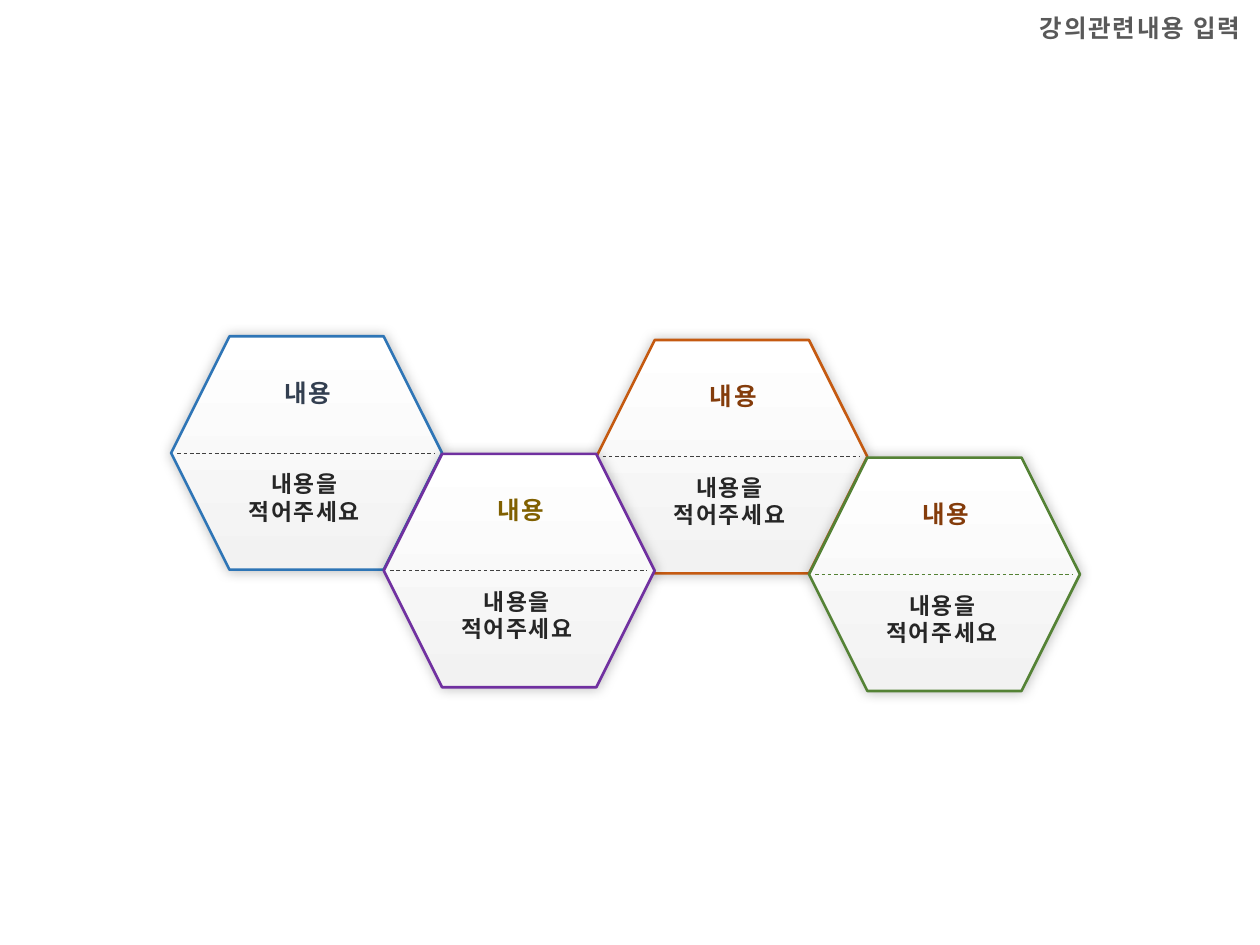
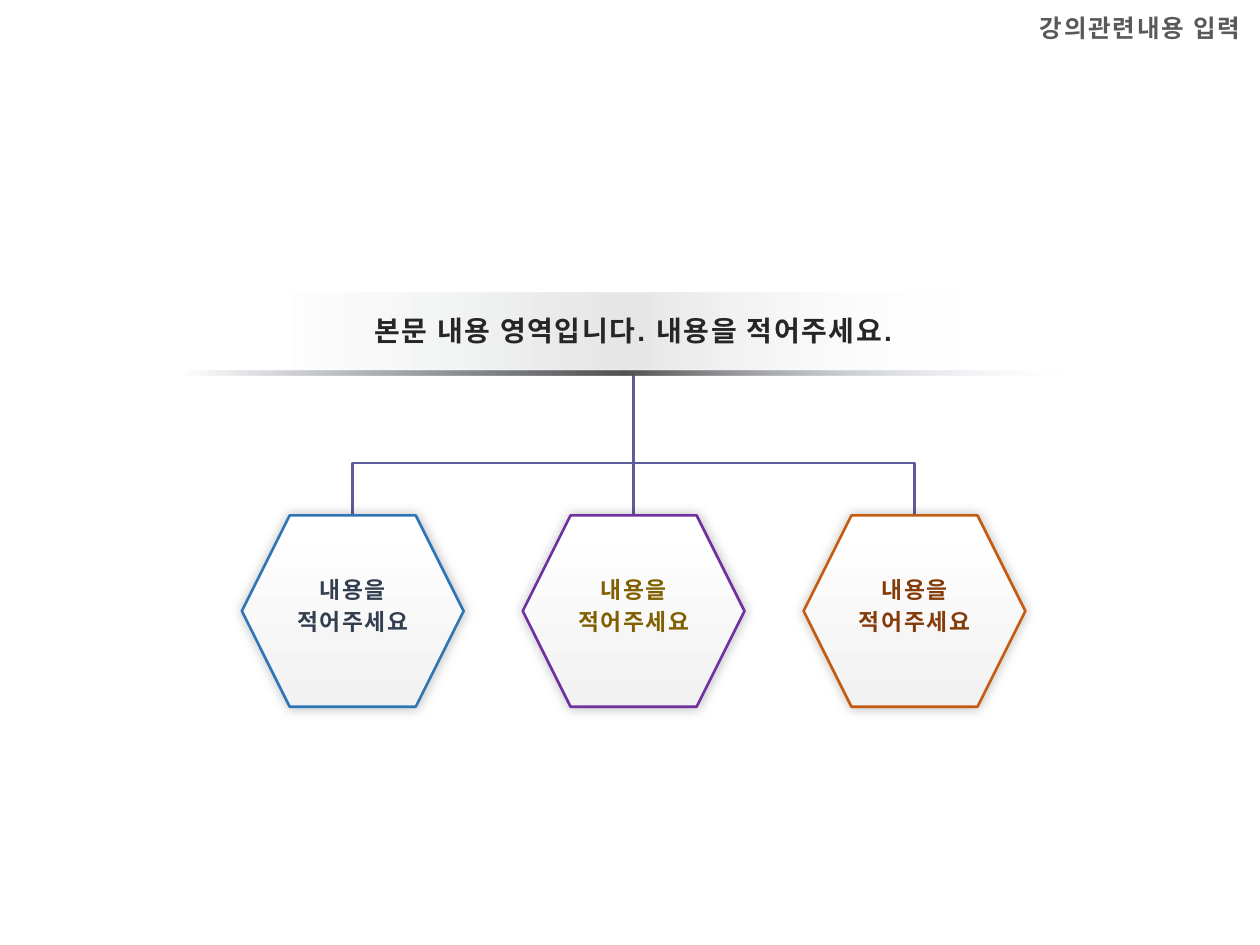
from pptx import Presentation
from pptx.dml.color import RGBColor
from pptx.enum.dml import MSO_LINE
from pptx.enum.shapes import MSO_CONNECTOR, MSO_SHAPE
from pptx.enum.text import MSO_ANCHOR, MSO_AUTO_SIZE, PP_ALIGN
from pptx.oxml import parse_xml
from pptx.oxml.ns import nsdecls, qn
from pptx.util import Pt

HEXAGON, RECTANGLE = MSO_SHAPE.HEXAGON, MSO_SHAPE.RECTANGLE
STRAIGHT, ELBOW = MSO_CONNECTOR.STRAIGHT, MSO_CONNECTOR.ELBOW
DASH = MSO_LINE.DASH
LEFT, CENTER = PP_ALIGN.LEFT, PP_ALIGN.CENTER
TOP = MSO_ANCHOR.TOP
NO_FIT = MSO_AUTO_SIZE.NONE

BLUE = RGBColor(0x2E, 0x75, 0xB6)
PURPLE = RGBColor(0x70, 0x30, 0xA0)
ORANGE = RGBColor(0xC5, 0x5A, 0x11)
GREEN = RGBColor(0x54, 0x82, 0x35)
NAVY = RGBColor(0x33, 0x3F, 0x50)
OLIVE = RGBColor(0x80, 0x60, 0x00)
BROWN = RGBColor(0x84, 0x3C, 0x0B)
INK = RGBColor(0x26, 0x26, 0x26)
GRAY = RGBColor(0x59, 0x59, 0x59)
DIVIDER = RGBColor(0x40, 0x40, 0x40)
BRANCH = RGBColor(0x5E, 0x5D, 0x99)
BLACK = RGBColor(0, 0, 0)
WHITE = RGBColor(0xFF, 0xFF, 0xFF)
PALE = RGBColor(0xF2, 0xF2, 0xF2)
ICE = RGBColor(0xE1, 0xEB, 0xFB)
STEEL = RGBColor(0x52, 0x52, 0x52)

FONT = "Arial"
TITLE = "강의관련내용 입력"
BODY = ["내용을", "적어주세요"]
CHAIN = [
    ("내용", BODY, BLUE, NAVY, DIVIDER),
    ("내용", BODY, PURPLE, OLIVE, DIVIDER),
    ("내용", BODY, ORANGE, BROWN, DIVIDER),
    ("내용", BODY, GREEN, BROWN, GREEN),
]
HEADLINE = "본문 내용 영역입니다. 내용을 적어주세요."
LEAVES = [(BODY, BLUE, NAVY), (BODY, PURPLE, OLIVE), (BODY, ORANGE, BROWN)]

HEX_FILL = [(0, WHITE, 100), (100, PALE, 100)]
BANNER_FILL = [(0, NAVY, 0), (50, BLACK, 10), (100, ICE, 0)]
RULE_FILL = [(0, NAVY, 0), (50, STEEL, 100), (100, ICE, 0)]


def write(shape, lines, size, color, align=CENTER, spacing=None):
    tf = shape.text_frame
    tf.word_wrap = True
    tf.auto_size = NO_FIT
    tf.vertical_anchor = TOP
    for i, line in enumerate(lines):
        p = tf.paragraphs[0] if i == 0 else tf.add_paragraph()
        r = p.add_run()
        r.text = line
        r._r.get_or_add_rPr().set("spc", "100")
        p.alignment = align
        if spacing:
            p.line_spacing = spacing
        p.font.name = FONT
        p.font.size = Pt(size)
        p.font.bold = True
        p.font.color.rgb = color


def add_text(slide, x, y, w, h, *args, **kwargs):
    box = slide.shapes.add_textbox(Pt(x), Pt(y), Pt(w), Pt(h))
    write(box, *args, **kwargs)


def add_gradient_shape(slide, kind, x, y, w, h, stops, angle):
    sp = slide.shapes.add_shape(kind, Pt(x), Pt(y), Pt(w), Pt(h))
    sp.shadow.inherit = False
    gs = "".join(
        f'<a:gs pos="{pos * 1000}"><a:srgbClr val="{color}">'
        f'<a:alpha val="{alpha * 1000}"/></a:srgbClr></a:gs>'
        for pos, color, alpha in stops)
    sp._element.spPr.find(qn("a:prstGeom")).addnext(parse_xml(
        f'<a:gradFill {nsdecls("a")} rotWithShape="1"><a:gsLst>{gs}</a:gsLst>'
        f'<a:lin ang="{angle * 60000}" scaled="0"/></a:gradFill>'))
    sp.line.fill.background()
    return sp


def add_hexagon(slide, x, y, w, h, color):
    sp = add_gradient_shape(slide, HEXAGON, x, y, w, h, HEX_FILL, 90)
    sp.line.color.rgb = color
    sp.line.width = Pt(1.5)
    sp._element.spPr.find(qn("a:effectLst")).append(parse_xml(
        f'<a:outerShdw {nsdecls("a")} blurRad="{Pt(7)}" dist="0" dir="0" algn="ctr">'
        '<a:srgbClr val="000000"><a:alpha val="25000"/></a:srgbClr></a:outerShdw>'))


def add_line(slide, x1, y1, x2, y2, color, width, kind=STRAIGHT):
    c = slide.shapes.add_connector(kind, Pt(x1), Pt(y1), Pt(x2), Pt(y2))
    c.line.color.rgb = color
    c.line.width = Pt(width)
    c._element.spPr.append(parse_xml(f'<a:effectLst {nsdecls("a")}/>'))
    return c


def add_branch(slide, x1, y1, x2, y2, bend_y):
    cx, cy = (x1 + x2) / 2, (y1 + y2) / 2
    dx, dy = abs(x2 - x1) / 2, abs(y2 - y1) / 2
    side = 1 if x1 < x2 else -1
    c = add_line(slide, cx + side * dy, cy + dx, cx - side * dy, cy - dx,
                 BRANCH, 1.5, ELBOW)
    spPr = c._element.spPr
    spPr.find(qn("a:xfrm")).set("rot", str((90 if side == 1 else 270) * 60000))
    bend = round((y1 - bend_y) / (y1 - y2) * 100000)
    geom = spPr.find(qn("a:prstGeom"))
    for child in list(geom):
        geom.remove(child)
    geom.append(parse_xml(
        f'<a:avLst {nsdecls("a")}><a:gd name="adj1" fmla="val {bend}"/></a:avLst>'))


def add_slide(prs):
    slide = prs.slides.add_slide(prs.slide_layouts[5])
    title = slide.shapes.title
    title.left, title.top, title.width, title.height = Pt(587), Pt(3.6), Pt(152), Pt(24.5)
    write(title, [TITLE], 14, GRAY, LEFT)
    return slide


def build_chain(prs):
    slide = add_slide(prs)
    w, h = 154.8, 133.4
    for i in sorted(range(len(CHAIN)), key=lambda i: i % 2):
        label, body, edge, label_color, divider = CHAIN[i]
        x = 97.8 + 121.5 * i
        y = 192.2 + 67.2 * (i % 2) + 2.1 * (i // 2)
        add_hexagon(slide, x, y, w, h, edge)
        middle = y + h / 2
        c = add_line(slide, x + 3.6, middle, x + w - 4.3, middle, divider, 0.5)
        c.line.dash_style = DASH
        add_text(slide, x + 16.2, y + 18.9, 124, 25.2, [label], 14, label_color,
                 spacing=Pt(18))
        add_text(slide, x + 20.2, y + 72.9, 111.6, 38.9, body, 13, INK)


def build_tree(prs):
    slide = add_slide(prs)
    w, h, top, gap = 126.7, 109.4, 294.5, 160.5
    center = 362.1
    lefts = [center - w / 2 + gap * (i - 1) for i in range(len(LEAVES))]
    for x in (lefts[-1], lefts[0]):
        add_branch(slide, x + w / 2, 385.2, center, 213.8, 264.6)
    add_line(slide, center, 229, center, 328.3, BRANCH, 1.5)
    add_gradient_shape(slide, RECTANGLE, 162.7, 167, 390.2, 44, BANNER_FILL, 0)
    for x, (body, edge, color) in zip(lefts, LEAVES):
        add_hexagon(slide, x, top, w, h, edge)
        add_text(slide, x + 1.4, top + 28.8, 124, 44, body, 13, color, spacing=Pt(18))
    add_gradient_shape(slide, RECTANGLE, 105.8, 211.6, 504, 2.9, RULE_FILL, 0)
    add_text(slide, 128.9, 175.7, 465.8, 26.6, [HEADLINE], 16, INK)


def main():
    prs = Presentation()
    prs.slide_width, prs.slide_height = Pt(720), Pt(540)
    build_chain(prs)
    build_tree(prs)
    prs.save("out.pptx")


if __name__ == "__main__":
    main()
